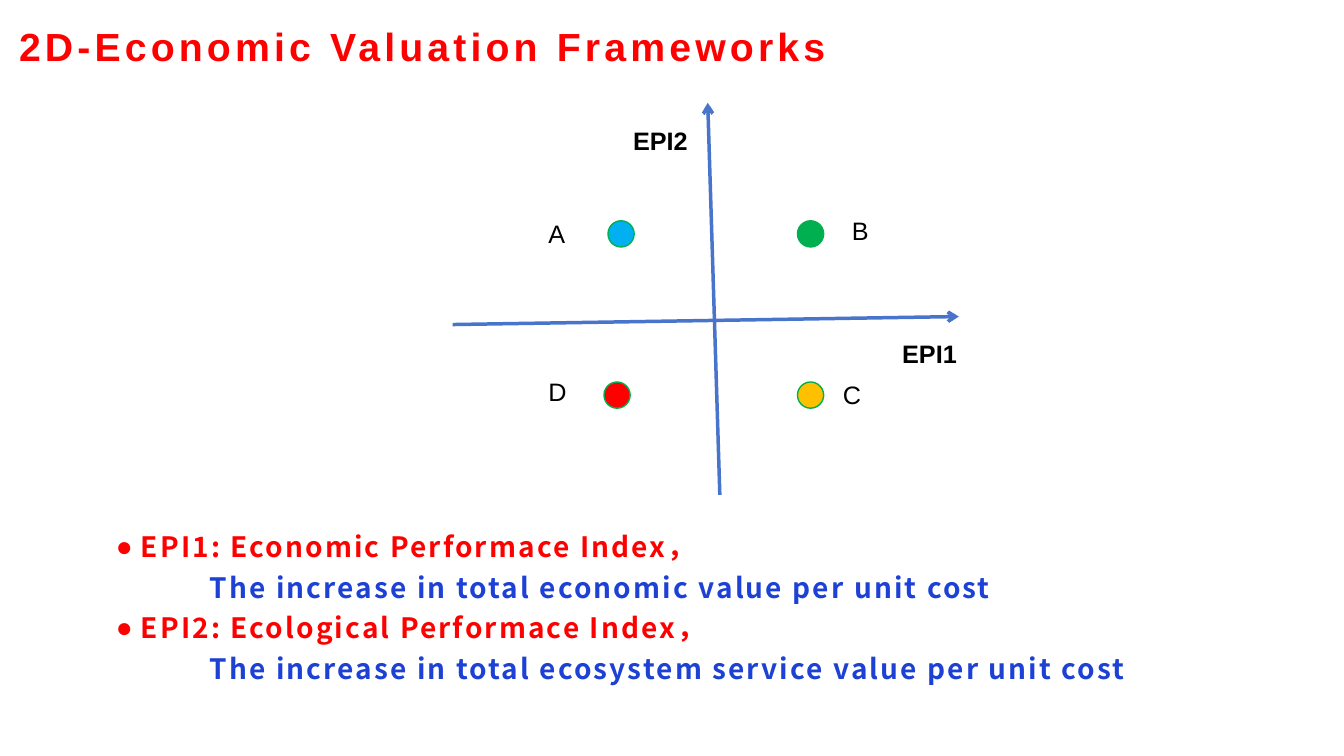
from dataclasses import dataclass

from lxml import etree
from pptx import Presentation
from pptx.dml.color import RGBColor
from pptx.enum.shapes import MSO_CONNECTOR, MSO_SHAPE
from pptx.enum.text import MSO_ANCHOR
from pptx.oxml.ns import qn
from pptx.util import Inches, Pt

STRAIGHT = MSO_CONNECTOR.STRAIGHT
OVAL = MSO_SHAPE.OVAL
MIDDLE, TOP = MSO_ANCHOR.MIDDLE, MSO_ANCHOR.TOP
SLIDE_W, SLIDE_H = Inches(13.33), Inches(7.5)


@dataclass(frozen=True)
class Theme:
    heading: str = "FF0000"
    detail: str = "1D41D5"
    label: str = "000000"
    axis: str = "4874CB"
    dot_edge: str = "00B050"
    font: str = "Arial"
    body_font: str = "Noto Sans CJK SC"
    title_size: float = 28
    body_size: float = 20
    label_size: float = 18


THEME = Theme()


# Every position and length is a percentage of the slide's width or height
@dataclass(frozen=True)
class Box:
    left: float
    top: float
    width: float
    height: float


@dataclass(frozen=True)
class Axis:
    start: tuple[float, float]
    end: tuple[float, float]


@dataclass(frozen=True)
class Label:
    text: str
    box: Box
    bold: bool = False


@dataclass(frozen=True)
class Option:
    left: float
    top: float
    color: str


@dataclass(frozen=True)
class Index:
    heading: str
    detail: str


LABEL_H = 5.33
DOT_W = 1.95
DOT_H = 3.47
UPPER, LOWER = 29.2, 50.53

TITLE_BOX = Box(0.68, 2.4, 62.79, 7.33)
INDEX_BOX = Box(7.88, 69.87, 88.45, 24.27)
AXES = [
    Axis((33.68, 42.93), (71.34, 41.87)),
    Axis((53.56, 65.47), (52.66, 13.6)),
]
OPTIONS = [
    Option(59.34, UPPER, "00B050"),
    Option(45.24, UPPER, "00B0F0"),
    Option(59.34, LOWER, "FFC000"),
    Option(44.94, LOWER, "FF0000"),
]
LABELS = [
    Label("EPI1", Box(66.39, 44.13, 6.3, LABEL_H), True),
    Label("EPI2", Box(46.36, 15.87, 6.3, LABEL_H), True),
    Label("A", Box(40.06, 28.27, 3.08, LABEL_H)),
    Label("B", Box(62.64, 27.87, 5.25, LABEL_H)),
    Label("C", Box(61.97, 49.47, 5.25, LABEL_H)),
    Label("D", Box(40.06, 49.07, 4.58, LABEL_H)),
]
INDICES = [
    Index("EPI1: Economic Performace Index，",
          "The increase in total economic value per unit cost"),
    Index("EPI2: Ecological Performace Index，",
          "The increase in total ecosystem service value per unit cost"),
]


def x(share: float) -> int:
    return round(SLIDE_W * share / 100)


def y(share: float) -> int:
    return round(SLIDE_H * share / 100)


def place(box: Box) -> tuple[int, int, int, int]:
    return x(box.left), y(box.top), x(box.width), y(box.height)


def add_frame(slide, box: Box, anchor=TOP):
    frame = slide.shapes.add_textbox(*place(box)).text_frame
    frame.word_wrap = True
    frame.vertical_anchor = anchor
    return frame


def write(paragraph, text: str, font: str, size: float, color: str,
          bold: bool = False, tracking: float = 0) -> None:
    run = paragraph.add_run()
    run.text = text
    paragraph.font.name = font
    paragraph.font.size = Pt(size)
    paragraph.font.bold = bold
    paragraph.font.color.rgb = RGBColor.from_string(color)
    properties = run._r.get_or_add_rPr()
    if tracking:
        properties.set("spc", str(round(tracking * 100)))
    etree.SubElement(properties, qn("a:ea"), typeface=font)


def indent(paragraph, margin: float, bullet: str = "") -> None:
    properties = paragraph._p.get_or_add_pPr()
    properties.set("marL", str(Inches(margin)))
    if bullet:
        properties.set("indent", str(-Inches(margin)))
        etree.SubElement(properties, qn("a:buFont"), typeface=THEME.font)
        etree.SubElement(properties, qn("a:buChar"), char=bullet)


def add_axis(slide, axis: Axis) -> None:
    (x1, y1), (x2, y2) = axis.start, axis.end
    arrow = slide.shapes.add_connector(STRAIGHT, x(x1), y(y1), x(x2), y(y2))
    arrow.line.color.rgb = RGBColor.from_string(THEME.axis)
    arrow.line.width = Pt(2.5)
    etree.SubElement(arrow.line._get_or_add_ln(), qn("a:tailEnd"), type="arrow")
    etree.SubElement(arrow._element.spPr, qn("a:effectLst"))


def add_option(slide, option: Option) -> None:
    box = Box(option.left, option.top, DOT_W, DOT_H)
    dot = slide.shapes.add_shape(OVAL, *place(box))
    dot.shadow.inherit = False
    dot.fill.solid()
    dot.fill.fore_color.rgb = RGBColor.from_string(option.color)
    dot.line.color.rgb = RGBColor.from_string(THEME.dot_edge)
    dot.line.width = Pt(1)


def add_label(slide, label: Label) -> None:
    frame = add_frame(slide, label.box)
    write(frame.paragraphs[0], label.text, THEME.font, THEME.label_size,
          THEME.label, label.bold)


def add_indices(slide) -> None:
    frame = add_frame(slide, INDEX_BOX)
    lines = [line for index in INDICES for line in (
        (index.heading, THEME.heading, 0.25, "●"),
        (index.detail, THEME.detail, 0.93, ""))]
    for number, (text, color, margin, bullet) in enumerate(lines):
        paragraph = frame.add_paragraph() if number else frame.paragraphs[0]
        paragraph.line_spacing = 0.9
        paragraph.space_after = Pt(7.5)
        indent(paragraph, margin, bullet)
        write(paragraph, text, THEME.body_font, THEME.body_size, color, True, 1.5)


def main() -> None:
    deck = Presentation()
    deck.slide_width, deck.slide_height = SLIDE_W, SLIDE_H
    slide = deck.slides.add_slide(deck.slide_layouts[6])

    # Title
    title = add_frame(slide, TITLE_BOX, MIDDLE)
    write(title.paragraphs[0], "2D-Economic Valuation Frameworks", THEME.font,
          THEME.title_size, THEME.heading, True, 3)

    # Index definitions
    add_indices(slide)

    # Quadrant diagram
    for axis in AXES:
        add_axis(slide, axis)
    for option in OPTIONS:
        add_option(slide, option)
    for label in LABELS:
        add_label(slide, label)

    deck.save("out.pptx")


if __name__ == "__main__":
    main()
